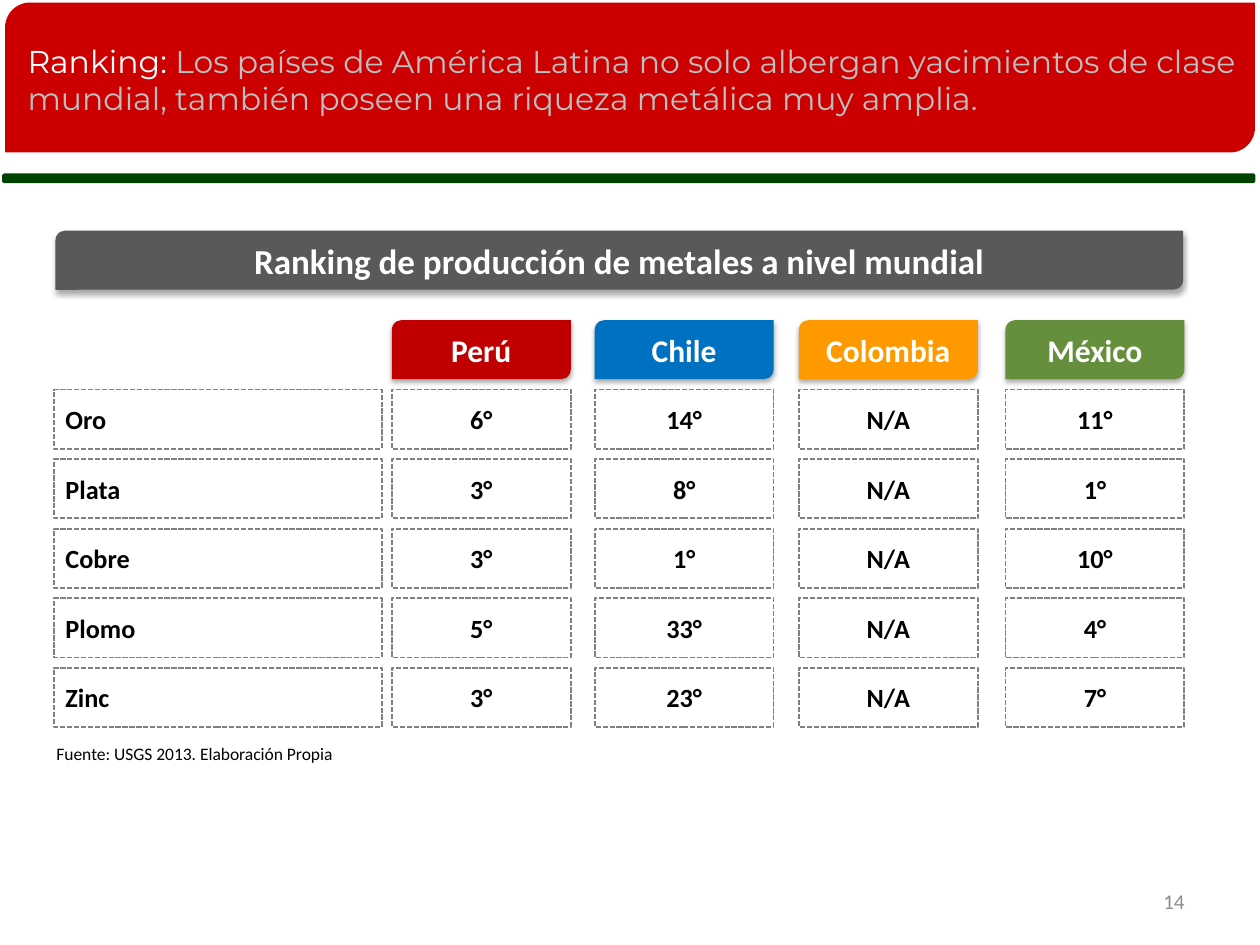
from lxml.etree import SubElement
from pptx import Presentation
from pptx.dml.color import RGBColor
from pptx.enum.dml import MSO_LINE
from pptx.enum.shapes import MSO_SHAPE
from pptx.enum.text import MSO_ANCHOR, MSO_AUTO_SIZE, PP_ALIGN
from pptx.oxml.ns import qn
from pptx.util import Inches, Pt

HEADLINE = [
    ("Ranking: ", "white"),
    ("Los países de América Latina no solo albergan yacimientos de clase mundial, "
     "también poseen una riqueza metálica muy amplia.", "pale"),
]
TABLE_TITLE = "Ranking de producción de metales a nivel mundial"
COUNTRIES = [
    ("Perú", "crimson", 3.11),
    ("Chile", "blue", 4.72),
    ("Colombia", "orange", 6.34),
    ("México", "green", 7.98),
]
RANKINGS = [
    ("Oro", "6°", "14°", "N/A", "11°"),
    ("Plata", "3°", "8°", "N/A", "1°"),
    ("Cobre", "3°", "1°", "N/A", "10°"),
    ("Plomo", "5°", "33°", "N/A", "4°"),
    ("Zinc", "3°", "23°", "N/A", "7°"),
]
SOURCE = "Fuente: USGS 2013. Elaboración Propia"
PAGE_NUMBER = "14"

THEME = {
    "colors": {
        "white": "FFFFFF", "black": "000000", "pale": "BFBFBF", "number": "8C8C8C",
        "red": "CC0000", "forest": "004200", "slate": "595959", "border": "808080",
        "crimson": "C00000", "blue": "0070C0", "orange": "FF9900", "green": "668F3D",
    },
    "sizes": {"headline": 18, "title": 20, "country": 18, "cell": 15, "source": 10, "number": 12},
    "fonts": {"body": "Calibri", "headline": "Montserrat"},
}
CELL_FRAME = {
    "margin_left": Inches(0.09), "margin_right": Inches(0.09),
    "margin_top": Inches(0.04), "margin_bottom": Inches(0.04),
}
TOP, BOTTOM_ROW = 2.54, 5.3
PITCH = (BOTTOM_ROW - TOP) / len(RANKINGS)
HEIGHT = 0.47
METAL_LEFT, METAL_WIDTH, RANK_WIDTH = 0.43, 2.6, 1.42


def color(name):
    return RGBColor.from_string(THEME["colors"][name])


def apply(target, values):
    for name, value in values.items():
        setattr(target, name, value)


def write(box, spans, size, align=PP_ALIGN.LEFT, bold=False, font="body", frame=None):
    apply(box.text_frame, {"word_wrap": True, "vertical_anchor": MSO_ANCHOR.MIDDLE, **(frame or {})})
    para = box.text_frame.paragraphs[0]
    para.alignment = align
    for text, tint in spans:
        span = para.add_run()
        span.text = text
        apply(span.font, {"name": THEME["fonts"][font], "size": Pt(THEME["sizes"][size]), "bold": bold})
        span.font.color.rgb = color(tint)


def add_text(page, place, *args, **options):
    box = page.shapes.add_textbox(*map(Inches, place))
    write(box, *args, **options)


def add_box(page, place, fill=None, kind=MSO_SHAPE.ROUND_2_DIAG_RECTANGLE):
    box = page.shapes.add_shape(kind, *map(Inches, place))
    box.shadow.inherit = False
    if fill:
        box.fill.solid()
        box.fill.fore_color.rgb = color(fill)
    else:
        box.fill.background()
    box.line.fill.background()
    return box


def outline(box, tint, width, dash=None):
    box.line.color.rgb = color(tint)
    apply(box.line, {"width": Pt(width), "dash_style": dash})


def add_header(page, place, fill, text, size):
    box = add_box(page, place, fill)
    effects = box._element.spPr.find(qn("a:effectLst"))
    shadow = SubElement(effects, qn("a:outerShdw"), blurRad=str(Pt(3.1)), dist=str(Pt(1.8)),
                        dir="5400000", rotWithShape="0")
    tint = SubElement(shadow, qn("a:srgbClr"), val=THEME["colors"]["black"])
    SubElement(tint, qn("a:alpha"), val="35000")
    write(box, [(text, "white")], size, PP_ALIGN.CENTER, bold=True)


def add_cell(page, left, top, width, text, align):
    box = add_box(page, (left, top, width, HEIGHT), kind=MSO_SHAPE.RECTANGLE)
    outline(box, "border", 1, MSO_LINE.SQUARE_DOT)
    write(box, [(text, "black")], "cell", align, bold=True, frame=CELL_FRAME)


def main():
    """Build the slide ranking metal production by country."""
    deck = Presentation()
    apply(deck, {"slide_width": Inches(10), "slide_height": Inches(7.5)})
    page = deck.slides.add_slide(deck.slide_layouts[6])

    add_box(page, (0.04, 0.02, 9.92, 1.19), "red")
    add_text(page, (0.12, 0.05, 9.82, 1.16), HEADLINE, "headline", font="headline")
    rule = add_box(page, (0.03, 1.39, 9.92, 0.05), "forest")
    outline(rule, "forest", 2)

    add_header(page, (0.44, 1.83, 8.95, HEIGHT), "slate", TABLE_TITLE, "title")
    for country, fill, left in COUNTRIES:
        add_header(page, (left, TOP, RANK_WIDTH, HEIGHT), fill, country, "country")
    for row, (metal, *ranks) in enumerate(RANKINGS, start=1):
        top = TOP + row * PITCH
        add_cell(page, METAL_LEFT, top, METAL_WIDTH, metal, PP_ALIGN.JUSTIFY)
        for (_, _, left), rank in zip(COUNTRIES, ranks):
            add_cell(page, left, top, RANK_WIDTH, rank, PP_ALIGN.CENTER)

    add_text(page, (0.35, 5.85, 4.34, 0.26), [(SOURCE, "black")], "source",
             frame={"vertical_anchor": MSO_ANCHOR.TOP, "auto_size": MSO_AUTO_SIZE.SHAPE_TO_FIT_TEXT})
    add_text(page, (7.17, 6.95, 2.33, 0.4), [(PAGE_NUMBER, "number")], "number", PP_ALIGN.RIGHT)
    deck.save("out.pptx")


if __name__ == "__main__":
    main()
